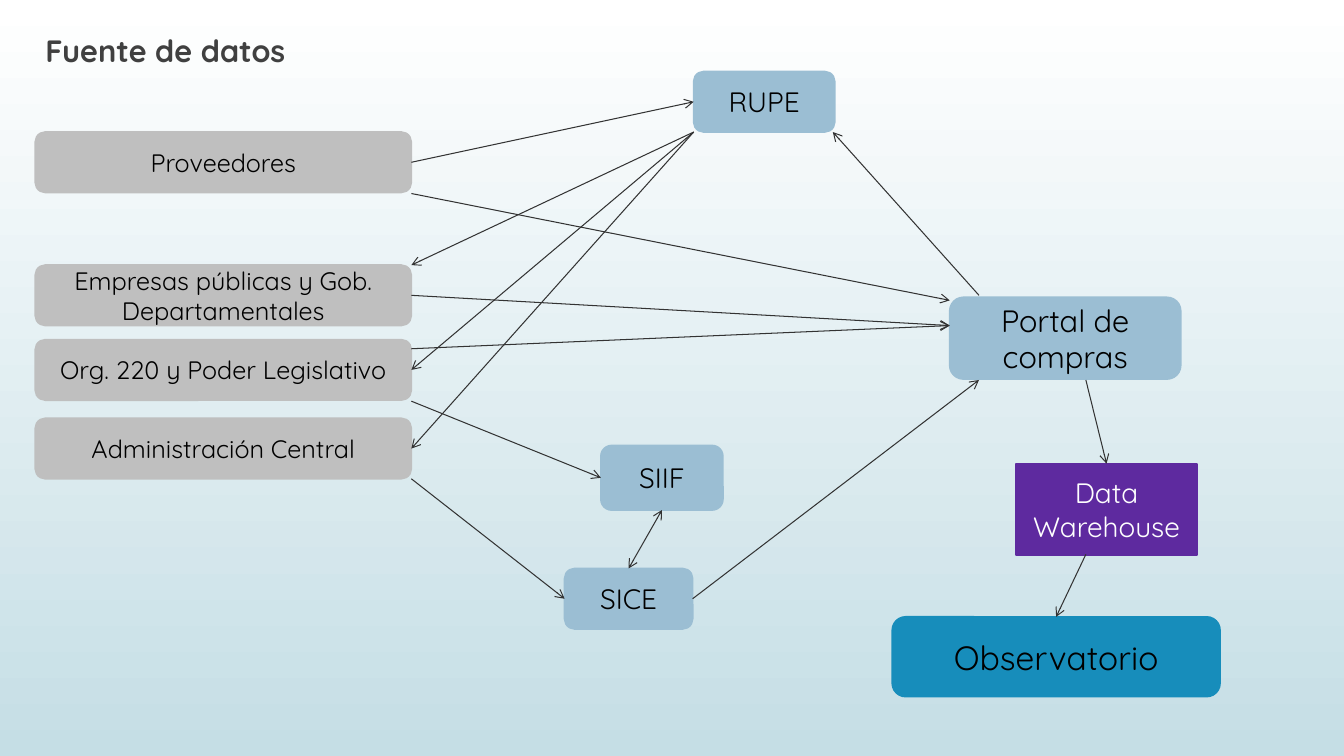
import pptx
import pptx.dml.color
import pptx.enum.dml
import pptx.enum.shapes
import pptx.enum.text
import pptx.oxml
import pptx.oxml.ns
import pptx.util

RGBColor = pptx.dml.color.RGBColor
Shape = pptx.enum.shapes.MSO_SHAPE
Align = pptx.enum.text.PP_ALIGN
Anchor = pptx.enum.text.MSO_ANCHOR

EMU_PER_PX = 9144  # 100 px to the inch

WHITE = RGBColor(0xFF, 0xFF, 0xFF)
BLACK = RGBColor(0x00, 0x00, 0x00)
MIST = RGBColor(0xC5, 0xDE, 0xE5)
CHARCOAL = RGBColor(0x40, 0x40, 0x40)
ARROW_GREY = RGBColor(0x33, 0x33, 0x33)
SOURCE_GREY = RGBColor(0xBF, 0xBF, 0xBF)
SYSTEM_BLUE = RGBColor(0x9B, 0xBE, 0xD3)
OUTPUT_BLUE = RGBColor(0x17, 0x8D, 0xBB)
WAREHOUSE_PURPLE = RGBColor(0x5E, 0x2A, 0x9F)

TOP, LEFT, BOTTOM, RIGHT = range(4)


def px(length):
    return pptx.util.Emu(length * EMU_PER_PX)


def write_text(frame, text, size, color=BLACK, bold=False, align=Align.CENTER,
               anchor=Anchor.MIDDLE, space_before=0):
    frame.word_wrap = True
    frame.auto_size = pptx.enum.text.MSO_AUTO_SIZE.NONE
    frame.vertical_anchor = anchor
    para = frame.paragraphs[0]
    para.alignment = align
    para.space_before = pptx.util.Pt(space_before)
    span = para.add_run()
    span.text = text
    span.font.name = "Quicksand"
    span.font.size = pptx.util.Pt(size)
    span.font.bold = bold
    span.font.color.rgb = color


class Diagram:
    """Holds the page and the common look of its boxes and arrows."""

    box_line = pptx.util.Pt(1.25)
    arrow_line = pptx.util.Pt(0.75)

    def __init__(self, page):
        self.page = page

    def background(self, top_color, bottom_color):
        fill = self.page.background.fill
        fill.gradient()
        fill.gradient_angle = 270
        for stop, color, position in zip(fill.gradient_stops, (top_color, bottom_color), (0, 1)):
            stop.color.rgb = color
            stop.position = position

    def title(self, text, left, top, width, height):
        title = self.page.shapes.title
        title.left, title.top, title.width, title.height = map(px, (left, top, width, height))
        write_text(title.text_frame, text, 22, CHARCOAL, bold=True, align=Align.LEFT,
                   anchor=Anchor.TOP, space_before=10)

    def box(self, text, left, top, width, height, fill=SYSTEM_BLUE, size=20,
            color=BLACK, kind=Shape.ROUNDED_RECTANGLE):
        box = self.page.shapes.add_shape(kind, px(left), px(top), px(width), px(height))
        box.shadow.inherit = False
        box.fill.solid()
        box.fill.fore_color.rgb = fill
        box.line.color.rgb = fill
        box.line.width = self.box_line
        write_text(box.text_frame, text, size, color)
        return box

    def arrow(self, start, end, both_ways=False):
        """Each end is an (x, y) point in px or a (box, side) pair to join."""
        joined = [not isinstance(place[0], int) for place in (start, end)]
        points = [(0, 0) if joint else place for place, joint in zip((start, end), joined)]
        arrow = self.page.shapes.add_connector(
            pptx.enum.shapes.MSO_CONNECTOR.STRAIGHT,
            *(px(value) for point in points for value in point))
        if joined[0]:
            arrow.begin_connect(*start)
        if joined[1]:
            arrow.end_connect(*end)
        arrow.line.color.rgb = ARROW_GREY
        arrow.line.width = self.arrow_line
        properties = arrow.element.spPr
        outline = properties.find(pptx.oxml.ns.qn("a:ln"))
        for tag in ("headEnd", "tailEnd") if both_ways else ("tailEnd",):
            outline.append(pptx.oxml.parse_xml(
                f'<a:{tag} {pptx.oxml.ns.nsdecls("a")} type="arrow"/>'))
        properties.append(pptx.oxml.parse_xml(
            f'<a:effectLst {pptx.oxml.ns.nsdecls("a")}/>'))


def main():
    deck = pptx.Presentation()
    deck.slide_width, deck.slide_height = px(1333), px(750)
    diagram = Diagram(deck.slides.add_slide(deck.slide_layouts[5]))
    diagram.background(WHITE, MIST)
    diagram.title("Fuente de datos", 35, 26, 1183, 534)

    suppliers, public_firms, agencies, central = [
        diagram.box(text, 35, top, 373, 60, fill=SOURCE_GREY, size=18)
        for text, top in (
            ("Proveedores", 131),
            ("Empresas públicas y Gob. Departamentales", 263),
            ("Org. 220 y Poder Legislativo", 337),
            ("Administración Central", 415),
        )
    ]
    diagram.box("Portal de compras", 942, 295, 229, 81, size=22)
    sice = diagram.box("SICE", 560, 564, 127, 60)
    siif = diagram.box("SIIF", 596, 442, 121, 64)
    rupe = diagram.box("RUPE", 688, 71, 140, 60)
    observatory = diagram.box("Observatorio", 885, 612, 325, 79, fill=OUTPUT_BLUE, size=24)
    warehouse = diagram.box("Data Warehouse", 1008, 460, 179, 91, fill=WAREHOUSE_PURPLE,
                            color=WHITE, kind=Shape.RECTANGLE)

    rupe_corner = (688, 131)
    portal_entry = (942, 323)
    diagram.arrow((sice, TOP), (siif, BOTTOM), both_ways=True)
    for start, end in (
        ((408, 475), (sice, LEFT)),
        ((408, 398), (siif, LEFT)),
        ((sice, RIGHT), (971, 377)),
        ((408, 346), portal_entry),
        ((971, 293), (826, 131)),
        ((suppliers, RIGHT), (rupe, LEFT)),
        ((public_firms, RIGHT), portal_entry),
        (rupe_corner, (408, 263)),
        ((408, 192), (942, 298)),
        (rupe_corner, (agencies, RIGHT)),
        (rupe_corner, (central, RIGHT)),
        ((1077, 377), (warehouse, TOP)),
        ((1077, 550), (observatory, TOP)),
    ):
        diagram.arrow(start, end)

    deck.save("out.pptx")


if __name__ == "__main__":
    main()
